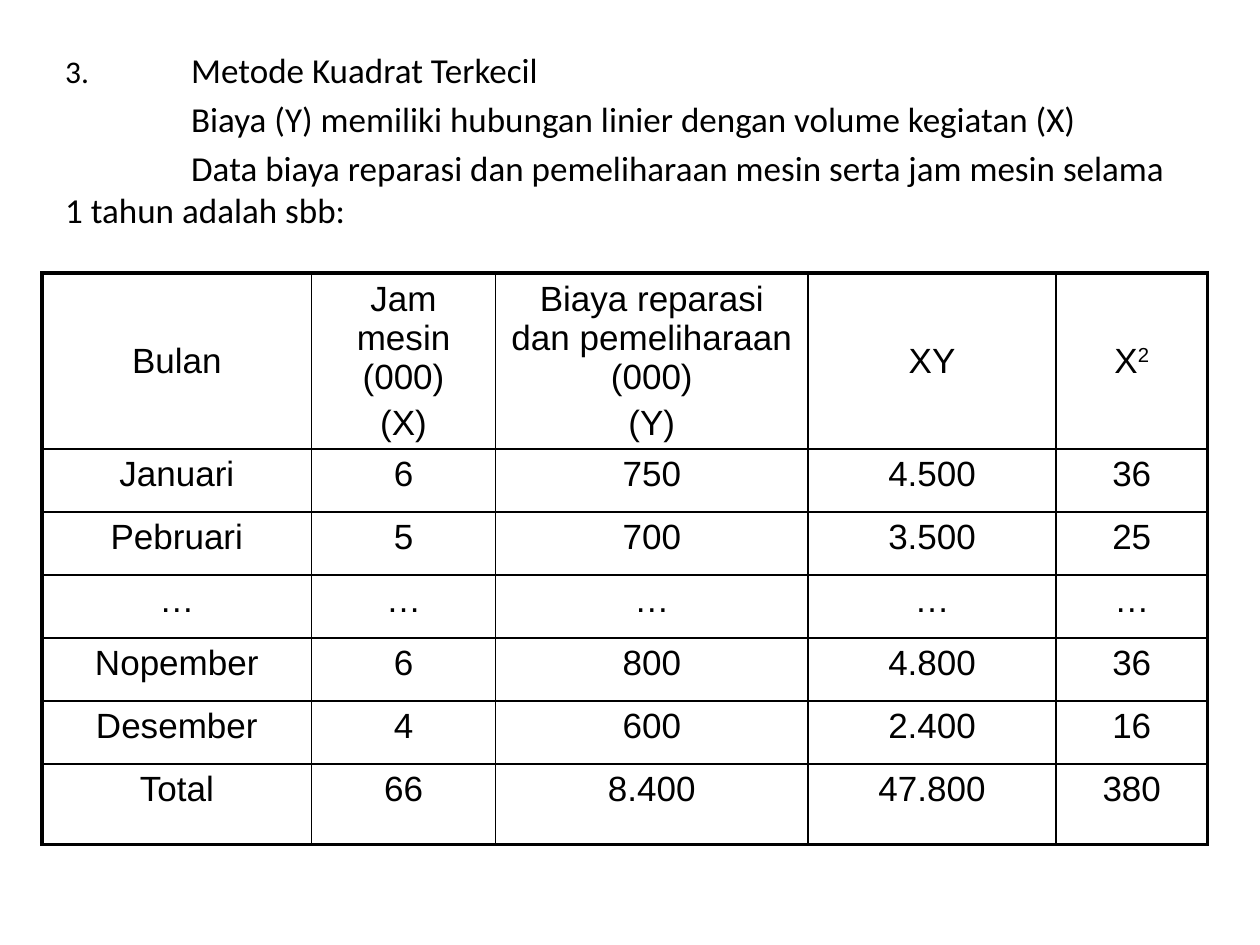
from lxml import etree
from pptx import Presentation
from pptx.dml.color import RGBColor
from pptx.enum.text import MSO_ANCHOR, MSO_AUTO_SIZE, PP_ALIGN
from pptx.oxml.ns import qn
from pptx.util import Cm, Pt

CENTER = PP_ALIGN.CENTER
TOP, MIDDLE = MSO_ANCHOR.TOP, MSO_ANCHOR.MIDDLE
NO_AUTOFIT = MSO_AUTO_SIZE.NONE
BLACK = "000000"
THIN, THICK = Pt(1), Pt(2.25)

INTRO = [
    "Metode Kuadrat Terkecil",
    "\tBiaya (Y) memiliki hubungan linier dengan volume kegiatan (X)",
    "\tData biaya reparasi dan pemeliharaan mesin serta jam mesin selama \t1 tahun adalah sbb:",
]
COST_ROWS = [
    ["Bulan", "Jam mesin (000)\n(X)", "Biaya reparasi dan pemeliharaan (000)\n(Y)", "XY", "X"],
    ["Januari", "6", "750", "4.500", "36"],
    ["Pebruari", "5", "700", "3.500", "25"],
    ["…"] * 5,
    ["Nopember", "6", "800", "4.800", "36"],
    ["Desember", "4", "600", "2.400", "16"],
    ["Total", "66", "8.400", "47.800", "380"],
]
COLUMN_WIDTHS = [5.43, 3.71, 6.3, 5, 3.05]
ROW_HEIGHTS = [3.55] + [1.27] * 5 + [1.62]


def rgb(color):
    return RGBColor.from_string(color)


def format_run(run, font_name, size=20):
    run.font.name = font_name
    run.font.size = Pt(size)
    run.font.color.rgb = rgb(BLACK)


def set_tab_distance(paragraph, distance):
    """Remove bullet and indent, and set the distance between tab stops."""
    properties = paragraph._p.get_or_add_pPr()
    properties.set("marL", "0")
    properties.set("indent", "0")
    properties.set("defTabSz", str(distance))
    etree.SubElement(properties, qn("a:buNone"))


def fill_intro(placeholder):
    placeholder.left, placeholder.top = Cm(1.06), Cm(0.85)
    placeholder.width, placeholder.height = Cm(23.5), Cm(4.23)
    text_frame = placeholder.text_frame
    text_frame.auto_size = NO_AUTOFIT
    text_frame.vertical_anchor = TOP
    text_frame.text = "\n".join(INTRO)
    for paragraph in text_frame.paragraphs:
        paragraph.space_before = Pt(4)
        set_tab_distance(paragraph, Cm(2.54))
        format_run(paragraph.runs[0], "Calibri")
    # The number is smaller than the heading beside it
    heading = text_frame.paragraphs[0]
    heading.runs[0].text = "3.\t"
    heading.runs[0].font.size = Pt(18)
    title_run = heading.add_run()
    title_run.text = INTRO[0]
    format_run(title_run, "Calibri")


def set_borders(cell, widths):
    properties = cell._tc.get_or_add_tcPr()
    for side, width in widths.items():
        line = etree.SubElement(properties, qn(f"a:ln{side}"), w=str(width))
        fill = etree.SubElement(line, qn("a:solidFill"))
        etree.SubElement(fill, qn("a:srgbClr"), val=BLACK)


def fill_cell(cell, text, anchor):
    cell.fill.background()
    cell.vertical_anchor = anchor
    cell.text_frame.text = text
    for paragraph in cell.text_frame.paragraphs:
        paragraph.alignment = CENTER
        paragraph.space_before = Pt(4)
        for run in paragraph.runs:
            format_run(run, "Arial")


def add_superscript(paragraph, text):
    run = paragraph.add_run()
    run.text = text
    format_run(run, "Arial")
    run._r.get_or_add_rPr().set("baseline", "30000")


def add_cost_table(slide):
    last_row, last_column = len(COST_ROWS) - 1, len(COLUMN_WIDTHS) - 1
    table = slide.shapes.add_table(
        len(COST_ROWS), len(COLUMN_WIDTHS), Cm(0.85), Cm(5.5),
        Cm(sum(COLUMN_WIDTHS)), Cm(sum(ROW_HEIGHTS))).table
    table.first_row = table.horz_banding = False
    for column, width in zip(table.columns, COLUMN_WIDTHS):
        column.width = Cm(width)
    for row, height in zip(table.rows, ROW_HEIGHTS):
        row.height = Cm(height)
    for row_index, texts in enumerate(COST_ROWS):
        for column_index, text in enumerate(texts):
            cell = table.cell(row_index, column_index)
            # Thick outer frame, thin inner grid
            set_borders(cell, {
                "L": THICK if column_index == 0 else THIN,
                "R": THICK if column_index == last_column else THIN,
                "T": THICK if row_index == 0 else THIN,
                "B": THICK if row_index == last_row else THIN,
            })
            fill_cell(cell, text, MIDDLE if row_index == 0 else TOP)
    add_superscript(table.cell(0, last_column).text_frame.paragraphs[0], "2")


def main():
    presentation = Presentation()
    presentation.slide_width, presentation.slide_height = Cm(25.4), Cm(19.05)
    slide = presentation.slides.add_slide(presentation.slide_layouts[1])
    # Only the body placeholder is used
    title = slide.shapes.title
    title.element.getparent().remove(title.element)
    fill_intro(slide.placeholders[1])
    add_cost_table(slide)
    presentation.save("out.pptx")


if __name__ == "__main__":
    main()
